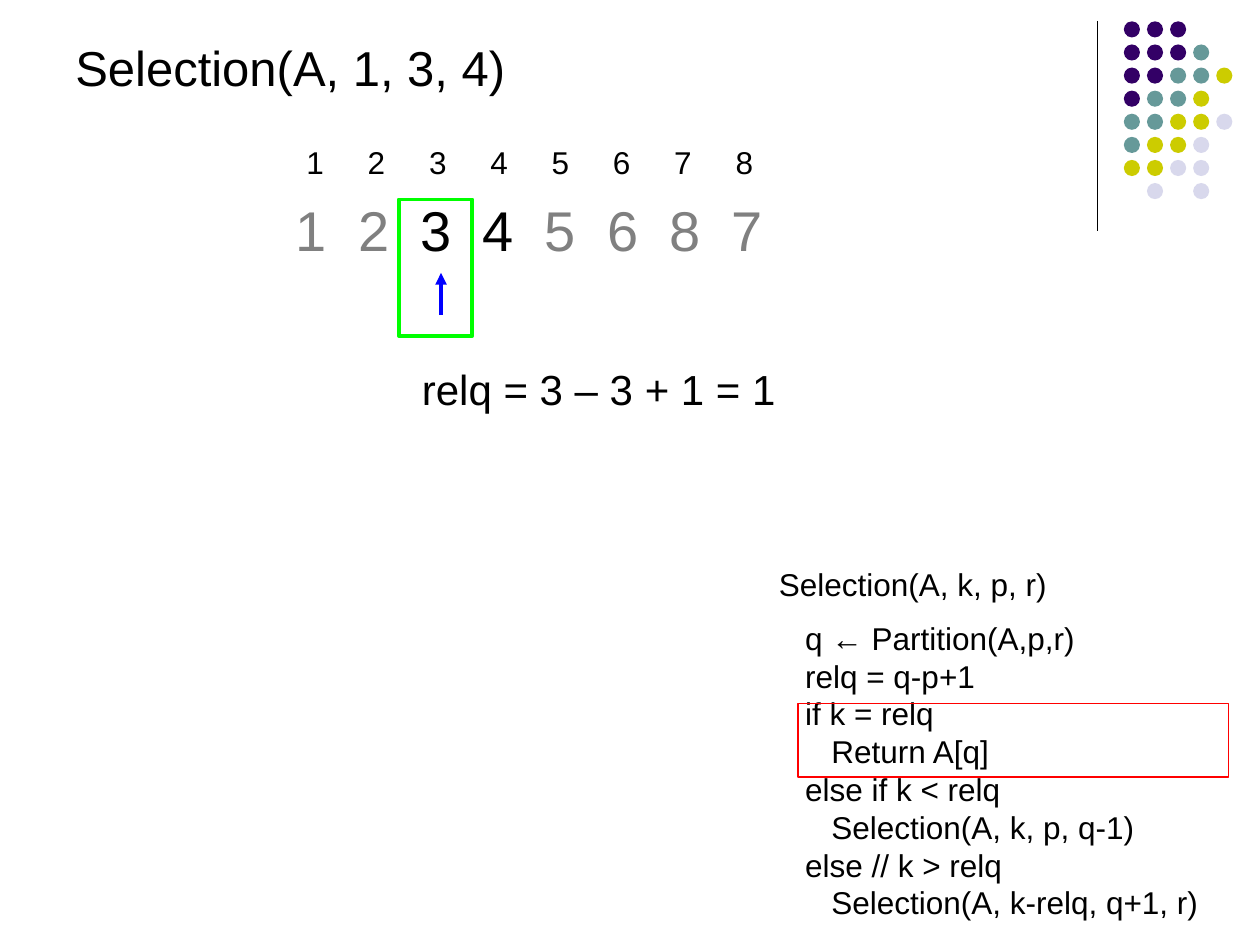
from lxml import etree
from pptx import Presentation
from pptx.dml.color import RGBColor
from pptx.enum.shapes import MSO_CONNECTOR, MSO_SHAPE
from pptx.oxml.ns import qn
from pptx.util import Pt

ELLIPSE, RECTANGLE = MSO_SHAPE.OVAL, MSO_SHAPE.RECTANGLE
STRAIGHT = MSO_CONNECTOR.STRAIGHT
FONT = "Arial"
COLORS = {
    "black": "000000", "gray": "808080", "red": "FF0000", "green": "00FF00",
    "blue": "0000FF", "P": "330066", "T": "669999", "Y": "CCCC00", "L": "D8D8EC",
}

DOT_ROWS = ["PPP", "PPPT", "PPTTY", "PTTY", "TTYYL", "TYYL", "YYLL", " L L"]
DOT_LEFT, DOT_TOP, DOT_PITCH, DOT_SIZE = 642.2, 12.2, 13.2, 9.2

LINES = [
    ((627, 12), (627, 132), "black", 0.75, False),
    ((252, 180), (252, 156), "blue", 2.25, True),
]
FRAMES = [
    ((456, 402, 246, 42), "red", 0.75),
    ((228, 114, 42, 78), "green", 2.25),
]
LABELS = [
    ((36, 18, 462, 41), 28, "Selection(A, 1, 3, 4)"),
    ((234, 204, 276, 36.7), 24, "relq = 3 – 3 + 1 = 1"),
]
ARRAY_ROWS = [
    ((168, 78, 300, 28.8), 18, 35.03, [("1 2 3 4 5 6 7 8", "black")]),
    ((162, 108, 330, 45.4), 32, 35.59,
     [("1 2", "gray"), ("3 4", "black"), ("5 6 8 7", "gray")]),
]
CODE_BOX, CODE_SIZE, CODE_INDENT = (438, 319.5, 270, 214.5), 18, 15
CODE = [
    (0, "Selection(A, k, p, r)"),
    (1, "q ← Partition(A,p,r)"),
    (1, "relq = q-p+1"),
    (1, "if k = relq"),
    (2, "Return A[q]"),
    (1, "else if k < relq"),
    (2, "Selection(A, k, p, q-1)"),
    (1, "else // k > relq"),
    (2, "Selection(A, k-relq, q+1, r)"),
]


def rgb(name):
    return RGBColor.from_string(COLORS[name])


def add_outline(page, kind, box):
    shape = page.shapes.add_shape(kind, *map(Pt, box))
    shape.shadow.inherit = False
    return shape


def add_line(page, start, end, color, width, arrow):
    line = page.shapes.add_connector(STRAIGHT, *map(Pt, start + end))
    line.line.color.rgb = rgb(color)
    line.line.width = Pt(width)
    if arrow:
        etree.SubElement(line.line._get_or_add_ln(), qn("a:tailEnd"), type="triangle")
    etree.SubElement(line._element.spPr, qn("a:effectLst"))


def add_text_frame(page, box):
    frame = page.shapes.add_textbox(*map(Pt, box)).text_frame
    frame.word_wrap = True
    return frame


def add_span(para, text, size, color="black"):
    span = para.add_run()
    span.text = text
    for name, value in {"name": FONT, "size": Pt(size)}.items():
        setattr(span.font, name, value)
    span.font.color.rgb = rgb(color)


def add_dots(page):
    for row, codes in enumerate(DOT_ROWS):
        for column, code in enumerate(codes):
            if code != " ":
                left, top = DOT_LEFT + column * DOT_PITCH, DOT_TOP + row * DOT_PITCH
                dot = add_outline(page, ELLIPSE, (left, top, DOT_SIZE, DOT_SIZE))
                dot.fill.solid()
                dot.fill.fore_color.rgb = rgb(code)
                dot.line.fill.background()


def add_code(page):
    frame = add_text_frame(page, CODE_BOX)
    for index, (level, text) in enumerate(CODE):
        para = frame.add_paragraph() if index else frame.paragraphs[0]
        para.space_before = Pt(CODE_SIZE / 2 if index == 1 else 0)
        para._p.get_or_add_pPr().set("marL", str(Pt(level * CODE_INDENT)))
        add_span(para, text, CODE_SIZE)


def add_array_row(page, box, size, pitch, groups):
    para = add_text_frame(page, box).paragraphs[0]
    stops = etree.SubElement(para._p.get_or_add_pPr(), qn("a:tabLst"))
    count = sum(len(text.split()) for text, color in groups)
    for stop in range(1, count):
        etree.SubElement(stops, qn("a:tab"), pos=str(Pt(stop * pitch)), algn="l")
    for index, (text, color) in enumerate(groups):
        lead = "\t" if index else ""
        add_span(para, lead + "\t".join(text.split()), size, color)


def main():
    deck = Presentation()
    deck.slide_width, deck.slide_height = Pt(720), Pt(540)
    page = deck.slides.add_slide(deck.slide_layouts[6])
    add_dots(page)
    add_code(page)
    for box, size, text in LABELS:
        add_span(add_text_frame(page, box).paragraphs[0], text, size)
    for row in ARRAY_ROWS:
        add_array_row(page, *row)
    for line in LINES:
        add_line(page, *line)
    for box, color, width in FRAMES:
        frame = add_outline(page, RECTANGLE, box)
        frame.fill.background()
        frame.line.color.rgb = rgb(color)
        frame.line.width = Pt(width)
    deck.save("out.pptx")


if __name__ == "__main__":
    main()
